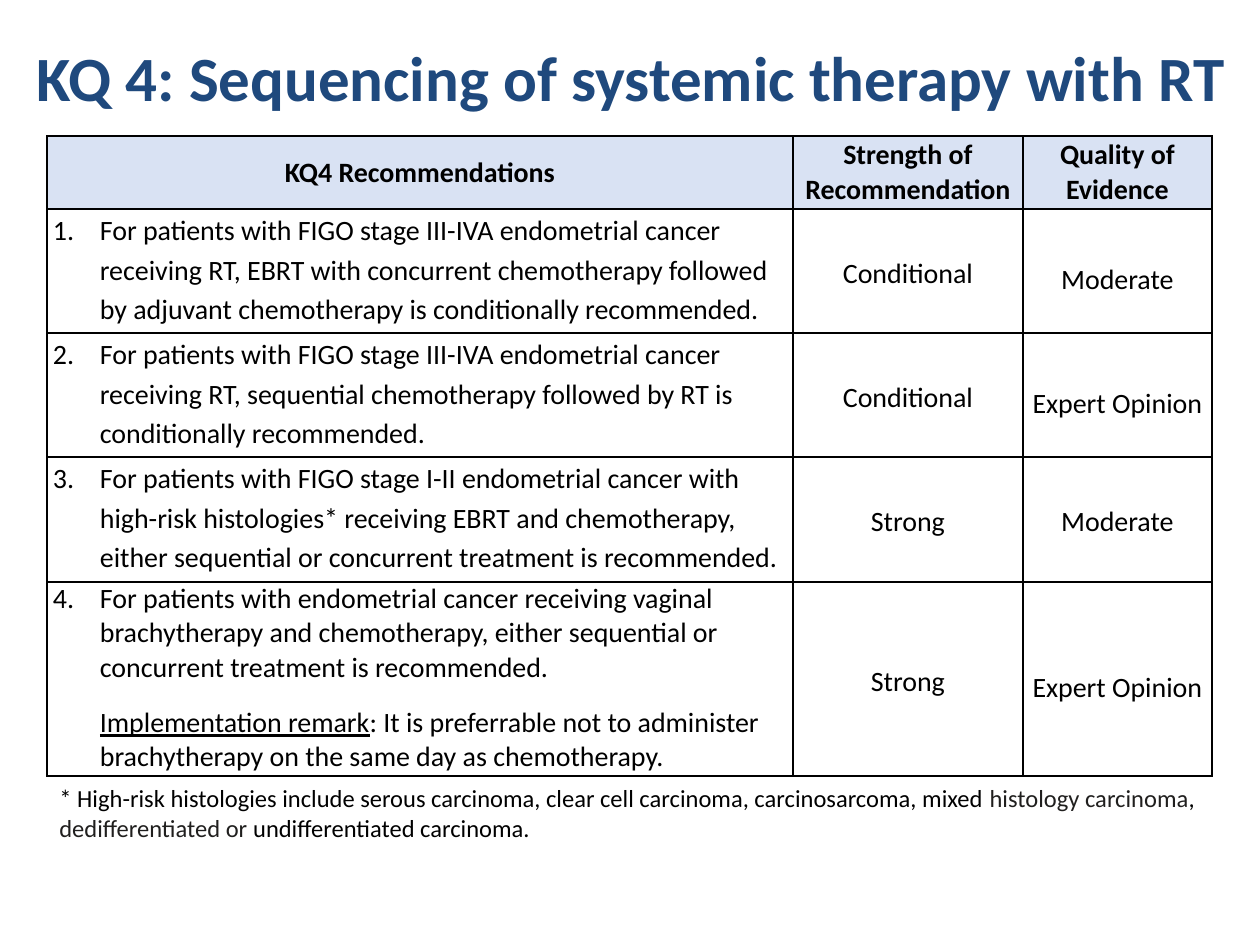
from lxml.etree import SubElement
from pptx import Presentation
from pptx.dml.color import RGBColor
from pptx.enum.text import MSO_ANCHOR, PP_ALIGN
from pptx.oxml.ns import qn
from pptx.util import Emu, Pt

PX = 914400 / 126
FONT = "Calibri"
NAVY = RGBColor(0x1F, 0x49, 0x7D)
BLACK = RGBColor(0, 0, 0)
CHARCOAL = RGBColor(0x20, 0x1F, 0x1E)
PALE_BLUE = RGBColor(0xD9, 0xE2, 0xF3)

TITLE = "KQ 4: Sequencing of systemic therapy with RT"
HEADERS = ["KQ4 Recommendations", "Strength of Recommendation", "Quality of Evidence"]
# Recommendation and its line spacing, strength, quality and its line spacing
RECOMMENDATIONS = [
    ("For patients with FIGO stage III-IVA endometrial cancer receiving RT, EBRT with "
     "concurrent chemotherapy followed by adjuvant chemotherapy is conditionally "
     "recommended.", 1.15, "Conditional", "Moderate", 1.5),
    ("For patients with FIGO stage III-IVA endometrial cancer receiving RT, sequential "
     "chemotherapy followed by RT is conditionally recommended.",
     1.15, "Conditional", "Expert Opinion", 1.5),
    ("For patients with FIGO stage I-II endometrial cancer with high-risk histologies* "
     "receiving EBRT and chemotherapy, either sequential or concurrent treatment is "
     "recommended.", 1.15, "Strong", "Moderate", 1.15),
    ("For patients with endometrial cancer receiving vaginal brachytherapy and "
     "chemotherapy, either sequential or concurrent treatment is recommended.",
     1.0, "Strong", "Expert Opinion", 1.5),
]
REMARK_LABEL = "Implementation remark"
REMARK = (": It is preferrable not to administer brachytherapy on the same day as "
          "chemotherapy.")
FOOTNOTE = [
    ("* High-risk histologies include serous carcinoma, clear cell carcinoma, "
     "carcinosarcoma, mixed ", BLACK),
    ("histology carcinoma", CHARCOAL),
    (", ", BLACK),
    ("dedifferentiated or ", CHARCOAL),
    ("undifferentiated carcinoma.", BLACK),
]

TABLE_LEFT, TABLE_TOP = 47, 136
COLUMN_WIDTHS = [746, 230, 189]
ROW_HEIGHTS = [73, 124, 124, 125, 194]
CELL_MARGIN = 6
INDENT = 47


def px(length):
    return Emu(round(length * PX))


def style(paragraph, size, color=BLACK, bold=False):
    font = paragraph.font
    font.name, font.size, font.bold = FONT, Pt(size), bold
    font.color.rgb = color


def add_text_box(slide, left, top, width, height):
    frame = slide.shapes.add_textbox(px(left), px(top), px(width), px(height)).text_frame
    frame.word_wrap = True
    return frame.paragraphs[0]


def indent(paragraph, number=None):
    """Indent a paragraph, hanging after its number if it has one."""
    properties = paragraph._p.get_or_add_pPr()
    properties.set("marL", str(px(INDENT)))
    properties.set("indent", str(-px(INDENT) if number else 0))
    if number:
        SubElement(properties, qn("a:buAutoNum"), type="arabicPeriod", startAt=str(number))


def format_cell(cell, fill=None):
    cell.margin_left = cell.margin_right = px(CELL_MARGIN)
    cell.margin_top = cell.margin_bottom = 0
    properties = cell._tc.get_or_add_tcPr()
    for side in ("lnL", "lnR", "lnT", "lnB"):
        line = SubElement(properties, qn(f"a:{side}"), w=str(Pt(1)))
        color = SubElement(SubElement(line, qn("a:solidFill")), qn("a:srgbClr"))
        color.set("val", str(BLACK))
    if fill is None:
        cell.fill.background()
    else:
        cell.fill.solid()
        cell.fill.fore_color.rgb = fill


def fill_centred(cell, text, spacing=1.0, bold=False):
    cell.vertical_anchor = MSO_ANCHOR.MIDDLE
    paragraph = cell.text_frame.paragraphs[0]
    paragraph.text = text
    paragraph.alignment = PP_ALIGN.CENTER
    paragraph.line_spacing = spacing
    style(paragraph, 16, bold=bold)


def fill_recommendation(cell, number, text, spacing):
    paragraph = cell.text_frame.paragraphs[0]
    paragraph.text = text
    indent(paragraph, number)
    paragraph.line_spacing = spacing
    style(paragraph, 16)


def add_remark(cell):
    paragraph = cell.text_frame.add_paragraph()
    indent(paragraph)
    paragraph.space_before = Pt(12)
    style(paragraph, 16)
    label = paragraph.add_run()
    label.text = REMARK_LABEL
    label.font.underline = True
    paragraph.add_run().text = REMARK


def add_recommendation_table(slide):
    table = slide.shapes.add_table(
        len(ROW_HEIGHTS), len(COLUMN_WIDTHS), px(TABLE_LEFT), px(TABLE_TOP),
        px(sum(COLUMN_WIDTHS)), px(sum(ROW_HEIGHTS))).table
    table.first_row = table.horz_banding = False
    for column, width in zip(table.columns, COLUMN_WIDTHS):
        column.width = px(width)
    for row, height in zip(table.rows, ROW_HEIGHTS):
        row.height = px(height)

    for column, header in enumerate(HEADERS):
        format_cell(table.cell(0, column), PALE_BLUE)
        fill_centred(table.cell(0, column), header, bold=True)
    for number, content in enumerate(RECOMMENDATIONS, start=1):
        text, text_spacing, strength, quality, quality_spacing = content
        cells = table.rows[number].cells
        for cell in cells:
            format_cell(cell)
        fill_recommendation(cells[0], number, text, text_spacing)
        fill_centred(cells[1], strength, 1.15)
        fill_centred(cells[2], quality, quality_spacing)
    add_remark(table.cell(len(RECOMMENDATIONS), 0))


def main():
    presentation = Presentation()
    presentation.slide_width, presentation.slide_height = px(1260), px(945)
    slide = presentation.slides.add_slide(presentation.slide_layouts[6])

    title = add_text_box(slide, 21, 32, 1220, 123)
    title.text = TITLE
    title.alignment = PP_ALIGN.CENTER
    style(title, 36, NAVY, bold=True)

    add_recommendation_table(slide)

    footnote = add_text_box(slide, 47, 777, 1166, 111)
    style(footnote, 14)
    for text, color in FOOTNOTE:
        run = footnote.add_run()
        run.text = text
        run.font.color.rgb = color

    presentation.save("out.pptx")


if __name__ == "__main__":
    main()
